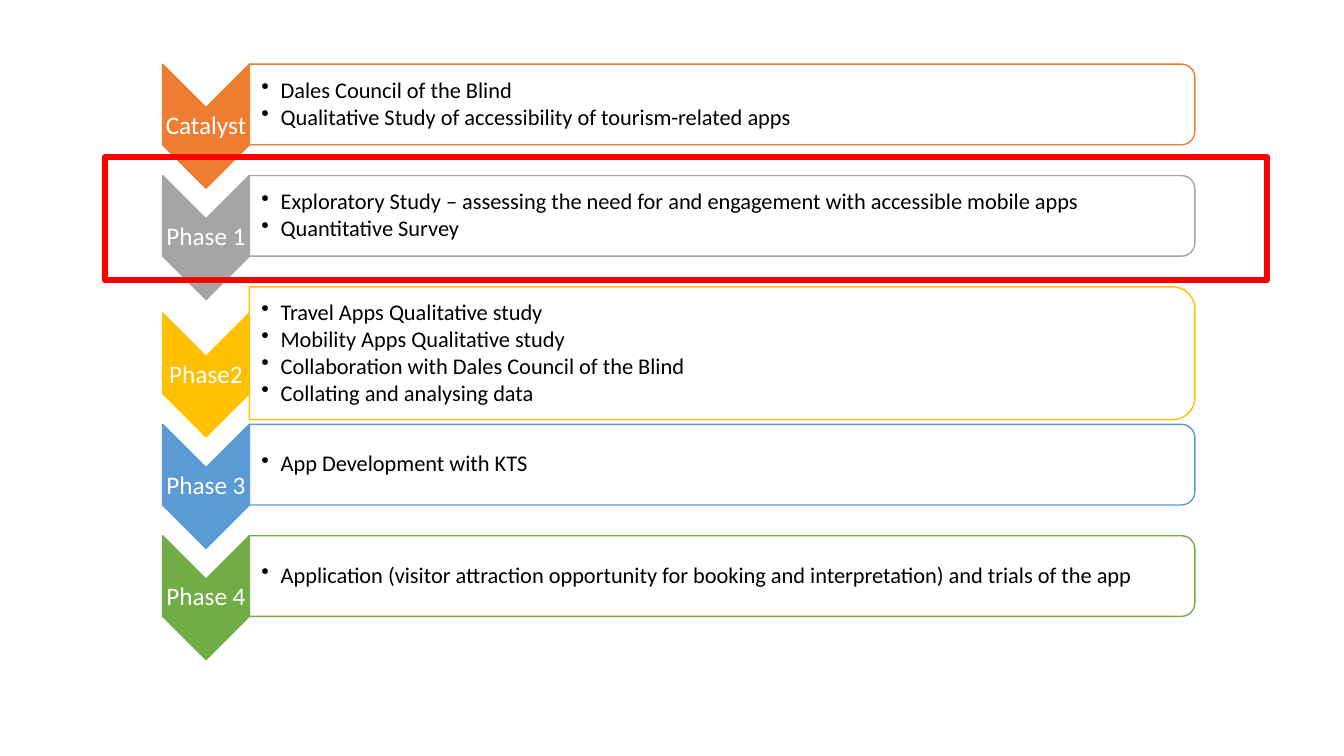
from dataclasses import dataclass

from lxml.etree import SubElement
from pptx import Presentation
from pptx.dml.color import RGBColor
from pptx.enum.shapes import MSO_SHAPE
from pptx.enum.text import MSO_ANCHOR, PP_ALIGN
from pptx.oxml.ns import qn
from pptx.util import Inches, Pt


@dataclass(frozen=True)
class Theme:
    """Colours, font and type sizes of the slide."""
    font: str = "Calibri"
    label_size: int = 18
    bullet_size: int = 16
    text: str = "000000"
    paper: str = "FFFFFF"
    highlight: str = "FF0000"
    phases: tuple = ("ED7D31", "A5A5A5", "FFC000", "5B9BD5", "70AD47")


COLUMNS, ROWS = 160, 90
CHEVRON_LEFT, CHEVRON_WIDTH, CHEVRON_HEIGHT = 19.36, 10.33, 14.76
PANEL_LEFT, PANEL_WIDTH = CHEVRON_LEFT + CHEVRON_WIDTH, 112.56
PANEL_HEIGHT, TALL_PANEL_HEIGHT = 9.6, 15.8
FIRST_TOP, PITCH = 7.64, 13.26
LABEL_HEIGHT = 4.44
CORNER_SHARE = 0.05

PHASES = [
    ("Catalyst", ["Dales Council of the Blind",
                  "Qualitative Study of accessibility of tourism-related apps"]),
    ("Phase 1", ["Exploratory Study – assessing the need for and engagement with accessible mobile apps",
                 "Quantitative Survey"]),
    ("Phase2", ["Travel Apps Qualitative study", "Mobility Apps Qualitative study",
                "Collaboration with Dales Council of the Blind",
                "Collating and analysing data"]),
    ("Phase 3", ["App Development with KTS"]),
    ("Phase 4", ["Application (visitor attraction opportunity for booking and interpretation) and trials of the app"]),
]


def write_text(frame, lines, *, font, size, color, align=PP_ALIGN.LEFT, bullet=False):
    """Fill a text frame with one formatted paragraph per line."""
    for index, line in enumerate(lines):
        paragraph = frame.paragraphs[0] if index == 0 else frame.add_paragraph()
        paragraph.alignment = align
        paragraph.line_spacing = 0.9
        run = paragraph.add_run()
        run.text = line
        run.font.name = font
        run.font.size = Pt(size)
        run.font.color.rgb = RGBColor.from_string(color)
        if bullet:
            paragraph.level = 1
            paragraph.space_after = Pt(2)
            properties = paragraph._p.get_or_add_pPr()
            properties.set("marL", str(Inches(0.19)))
            properties.set("indent", str(-Inches(0.19)))
            SubElement(properties, qn("a:buChar")).set("char", "•")


class PhaseSlide:
    """Draw phase elements on a slide measured in grid columns and rows."""

    def __init__(self, presentation, theme):
        """Add a blank slide and derive the grid from its size."""
        self.theme = theme
        self.slide = presentation.slides.add_slide(presentation.slide_layouts[6])
        self.column = presentation.slide_width / COLUMNS
        self.row = presentation.slide_height / ROWS
        self.diagram = self.slide.shapes.add_group_shape().shapes

    def box(self, left, top, width, height):
        """Convert a grid box to slide lengths."""
        return (round(left * self.column), round(top * self.row),
                round(width * self.column), round(height * self.row))

    def outline(self, shapes, kind, box, color, weight=1, fill=None, turned=False):
        """Add a preset shape that covers the box, optionally turned a quarter."""
        left, top, width, height = self.box(*box)
        if turned:
            left, top = left + (width - height) // 2, top + (height - width) // 2
            width, height = height, width
        shape = shapes.add_shape(kind, left, top, width, height)
        shape.rotation = 90 if turned else 0
        shape.shadow.inherit = False
        shape.line.color.rgb = RGBColor.from_string(color)
        shape.line.width = Pt(weight)
        if fill:
            shape.fill.solid()
            shape.fill.fore_color.rgb = RGBColor.from_string(fill)
        else:
            shape.fill.background()
        return shape

    def text(self, box, lines, inset=0.01, **style):
        """Add a vertically centred text box."""
        frame = self.diagram.add_textbox(*self.box(*box)).text_frame
        frame.word_wrap = True
        frame.vertical_anchor = MSO_ANCHOR.MIDDLE
        frame.margin_left = Inches(inset)
        frame.margin_top = frame.margin_right = frame.margin_bottom = Inches(0.01)
        write_text(frame, lines, font=self.theme.font, **style)

    def chevron(self, top, label, color):
        """Add a downward chevron with its label."""
        self.outline(self.diagram, MSO_SHAPE.CHEVRON,
                     (CHEVRON_LEFT, top, CHEVRON_WIDTH, CHEVRON_HEIGHT),
                     color, fill=color, turned=True)
        label_top = top + (CHEVRON_HEIGHT - LABEL_HEIGHT) / 2
        self.text((CHEVRON_LEFT, label_top, CHEVRON_WIDTH, LABEL_HEIGHT), [label],
                  size=self.theme.label_size, color=self.theme.paper, align=PP_ALIGN.CENTER)

    def panel(self, top, height, lines, color):
        """Add a panel rounded on the right with its bullets."""
        shape = self.outline(self.diagram, MSO_SHAPE.ROUND_2_SAME_RECTANGLE,
                             (PANEL_LEFT, top, PANEL_WIDTH, height),
                             color, fill=self.theme.paper, turned=True)
        fill_color = shape._element.spPr.find(qn("a:solidFill")).find(qn("a:srgbClr"))
        SubElement(fill_color, qn("a:alpha")).set("val", "90000")
        inset = height * CORNER_SHARE
        self.text((PANEL_LEFT, top + inset, PANEL_WIDTH - inset, height - 2 * inset), lines,
                  inset=0.12, size=self.theme.bullet_size, color=self.theme.text, bullet=True)

    def highlight(self, left, top, width, height):
        """Add the frame around the current phase."""
        self.outline(self.slide.shapes, MSO_SHAPE.RECTANGLE, (left, top, width, height),
                     self.theme.highlight, weight=4.5)


def main():
    """Build the slide of research phases."""
    presentation = Presentation()
    presentation.slide_width, presentation.slide_height = Inches(13.33), Inches(7.5)
    theme = Theme()
    slide = PhaseSlide(presentation, theme)
    top = FIRST_TOP
    for (label, lines), color in zip(PHASES, theme.phases):
        height = TALL_PANEL_HEIGHT if len(lines) > 2 else PANEL_HEIGHT
        chevron_top = top + (height - PANEL_HEIGHT) / 2
        slide.chevron(chevron_top, label, color)
        slide.panel(top, height, lines, color)
        top = chevron_top + PITCH
    slide.highlight(12.48, 18.72, 138.36, 14.64)
    presentation.save("out.pptx")


if __name__ == "__main__":
    main()
